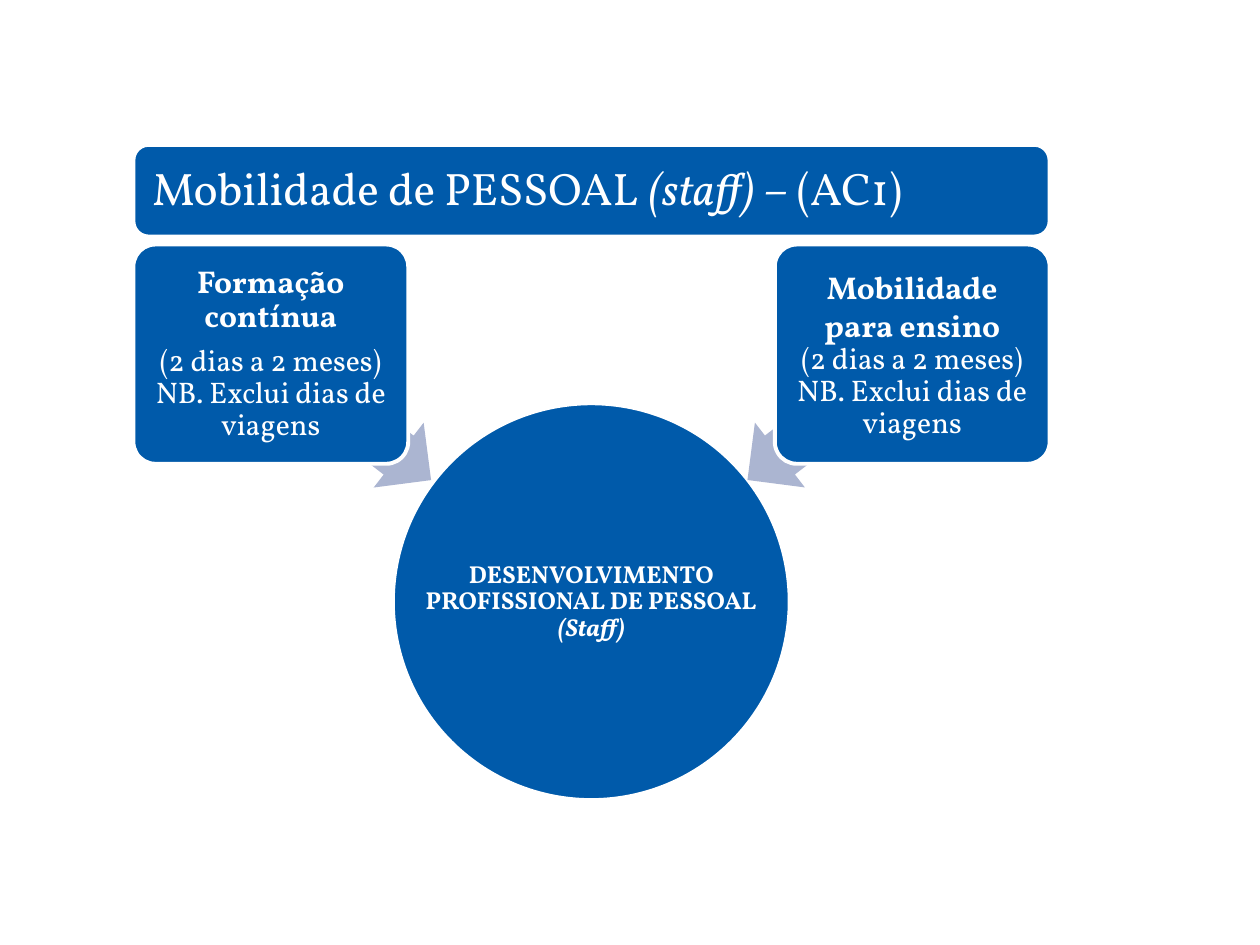
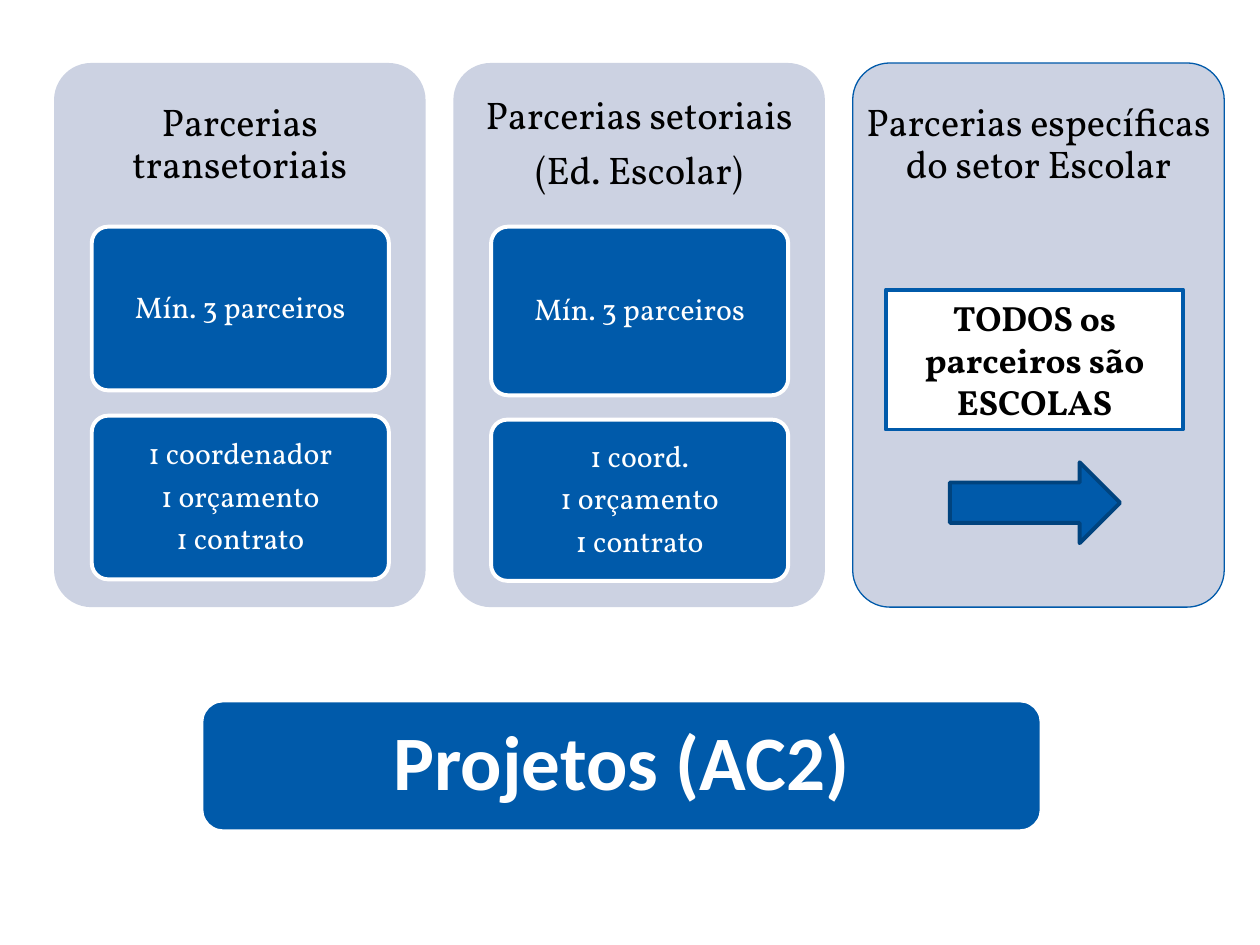
"""Build two slides on staff mobility (AC1) and projects (AC2)."""
from dataclasses import dataclass

from lxml import etree
from pptx import Presentation
from pptx.dml.color import RGBColor
from pptx.enum.shapes import MSO_SHAPE
from pptx.enum.text import MSO_ANCHOR, MSO_AUTO_SIZE, PP_ALIGN
from pptx.oxml.ns import qn
from pptx.util import Cm, Pt

ROUND, OVAL, RECT = MSO_SHAPE.ROUNDED_RECTANGLE, MSO_SHAPE.OVAL, MSO_SHAPE.RECTANGLE
LEFT_ARROW, RIGHT_ARROW = MSO_SHAPE.LEFT_ARROW, MSO_SHAPE.RIGHT_ARROW
LEFT, CENTER = PP_ALIGN.LEFT, PP_ALIGN.CENTER
MIDDLE, NO_FIT = MSO_ANCHOR.MIDDLE, MSO_AUTO_SIZE.NONE
TITLE_ONLY, TWO_CONTENT = 5, 3

COLORS = {
    "blue": "005AAA",
    "navy": "00437E",
    "arrow": "ABB5D1",
    "panel": "CCD2E2",
    "white": "FFFFFF",
    "black": "000000",
}


@dataclass(frozen=True)
class Box:
    """A frame in centimetres."""
    x: float
    y: float
    w: float
    h: float

    def inner(self, gap: float) -> "Box":
        """Return the frame shrunk by a gap on every side."""
        return Box(self.x + gap, self.y + gap, self.w - 2 * gap, self.h - 2 * gap)


@dataclass(frozen=True)
class Run:
    """A stretch of text in one style."""
    text: str
    bold: bool = False
    italic: bool = False


@dataclass(frozen=True)
class Para:
    """A paragraph; a tight one has close lines and space after it."""
    runs: tuple[Run, ...]
    size: float
    tight: bool = True


@dataclass(frozen=True)
class Column:
    """A partnership column with its heading and its two cards."""
    heading: tuple[str, ...]
    partners: tuple[float, float] | None = None
    terms: tuple[float, float] | None = None
    items: tuple[str, ...] = ()
    line: str | None = None


def plain(size: float, *texts: str) -> list[Para]:
    """Return one unstyled paragraph for each text."""
    return [Para((Run(t),), size) for t in texts]


def rgb(name: str) -> RGBColor:
    """Look up a colour of the palette."""
    return RGBColor.from_string(COLORS[name])


def place(sp, box: Box) -> None:
    """Move a shape to a frame."""
    for name, value in {"left": box.x, "top": box.y, "width": box.w, "height": box.h}.items():
        setattr(sp, name, Cm(value))


def draw(s, kind, box: Box, fill: str = "blue", line: str | None = "white",
         width: float = 2.25, adj: tuple[float, ...] = (), rotation: float = 0):
    """Draw a filled preset shape."""
    sp = s.shapes.add_shape(kind, Cm(box.x), Cm(box.y), Cm(box.w), Cm(box.h))
    sp.shadow.inherit = False
    sp.rotation = rotation
    for i, value in enumerate(adj):
        sp.adjustments[i] = value
    sp.fill.solid()
    sp.fill.fore_color.rgb = rgb(fill)
    if line:
        sp.line.color.rgb = rgb(line)
        sp.line.width = Pt(width)
    else:
        sp.line.fill.background()
    return sp


def write(sp, paras: list[Para], color: str = "white", inset: float = 0.1,
          align=CENTER, font: str = "Vollkorn") -> None:
    """Fill the text frame of a shape or placeholder."""
    tf = sp.text_frame
    frame = {"word_wrap": True, "auto_size": NO_FIT, "vertical_anchor": MIDDLE}
    frame |= {f"margin_{side}": Cm(inset) for side in ("left", "right", "top", "bottom")}
    for name, value in frame.items():
        setattr(tf, name, value)
    for i, para in enumerate(paras):
        p = tf.paragraphs[0] if i == 0 else tf.add_paragraph()
        pPr = p._p.get_or_add_pPr()
        pPr.set("marL", "0")
        pPr.set("indent", "0")
        etree.SubElement(pPr, qn("a:buNone"))
        spacing = {
            "alignment": align,
            "line_spacing": 0.9 if para.tight else 1.0,
            "space_before": Pt(0),
            "space_after": Pt(0.35 * para.size if para.tight else 0),
        }
        for name, value in spacing.items():
            setattr(p, name, value)
        for run in para.runs:
            r = p.add_run()
            r.text = run.text
            style = {"name": font, "size": Pt(para.size), "bold": run.bold, "italic": run.italic}
            for name, value in style.items():
                setattr(r.font, name, value)
            r.font.color.rgb = rgb(color)


def label(s, box: Box, paras: list[Para], **options) -> None:
    """Write text in a box of its own."""
    sp = s.shapes.add_textbox(Cm(box.x), Cm(box.y), Cm(box.w), Cm(box.h))
    write(sp, paras, **options)


def banner(s, box: Box, gap: float, para: Para, **options) -> None:
    """Draw a band with the slide title on top of it."""
    sp = draw(s, ROUND, box)
    title = s.shapes.title
    sp._element.addnext(title._element)
    place(title, box.inner(gap))
    write(title, [para], **options)


def mobility_slide(prs) -> None:
    """Build the slide on staff mobility."""
    s = prs.slides.add_slide(prs.slide_layouts[TITLE_ONLY])
    circle = Box(7.92, 8.13, 8, 8)
    draw(s, OVAL, circle)
    label(s, circle, [Para((Run("DESENVOLVIMENTO PROFISSIONAL DE PESSOAL ", bold=True),
                            Run("(Staff)", bold=True, italic=True)), 14)], inset=0.03)

    duration = plain(17, "(2 dias a 2 meses) NB. Exclui dias de viagens")
    training = [Para((Run("Formação contínua", bold=True),), 18)]
    teaching = [Para((Run(t, bold=True),), 18, tight=False)
                for t in ("Mobilidade", "para ensino")]
    for card_x, arrow_x, angle, heading in ((2.69, 5.16, 217.6, training),
                                            (15.62, 14.66, 322.4, teaching)):
        draw(s, LEFT_ARROW, Box(arrow_x, 7.65, 3.94, 1.65), "arrow", None,
             adj=(0.6, 0.5), rotation=angle)
        card = Box(card_x, 4.93, 5.54, 4.42)
        draw(s, ROUND, card, adj=(0.1,))
        label(s, card, heading + duration)

    title = Para((Run("Mobilidade de PESSOAL "), Run("(staff)", italic=True),
                  Run(" – (AC1)")), 26)
    banner(s, Box(2.69, 2.92, 18.47, 1.85), 0.1, title, inset=0.28, align=LEFT)


def projects_slide(prs) -> None:
    """Build the slide on project partnerships."""
    s = prs.slides.add_slide(prs.slide_layouts[TWO_CONTENT])
    banner(s, Box(4.06, 14.12, 16.94, 2.64), 0.13,
           Para((Run("Projetos (AC2)", bold=True),), 44), inset=0.25, font="Calibri")

    columns = (
        Column(("Parcerias transetoriais",), (4.57, 3.3), (8.38, 3.3),
               ("1 coordenador", "1 orçamento", "1 contrato")),
        Column(("Parcerias setoriais", "(Ed. Escolar)"), (4.57, 3.4), (8.46, 3.25),
               ("1 coord.", "1 orçamento", "1 contrato")),
        Column(("Parcerias específicas do setor Escolar",), line="blue"),
    )
    for i, column in enumerate(columns):
        x = 1.09 + 8.05 * i
        draw(s, ROUND, Box(x, 1.27, 7.49, 10.97), "panel", column.line, 0.75, (0.1,))
        label(s, Box(x, 1.27, 7.49, 3.3), plain(22, *column.heading),
              color="black", inset=0.23)
        if column.partners and column.terms:
            partners, terms = (Box(x + 0.76, y, 5.99, h)
                               for y, h in (column.partners, column.terms))
            draw(s, ROUND, partners, adj=(0.1,))
            label(s, partners, plain(17, "Mín. 3 parceiros"))
            card = draw(s, ROUND, terms, adj=(0.1,))
            body = s.placeholders[i + 1]
            card._element.addnext(body._element)
            place(body, terms)
            write(body, plain(17, *column.items))

    draw(s, RIGHT_ARROW, Box(19.15, 9.32, 3.43, 1.63), line="navy")
    note = draw(s, RECT, Box(17.86, 5.84, 5.99, 2.82), "white", "blue")
    write(note, [Para((Run("TODOS os parceiros são ESCOLAS", bold=True),), 20, tight=False)],
          color="black", inset=0.25)


def main() -> None:
    """Build and save the presentation."""
    prs = Presentation()
    prs.slide_width, prs.slide_height = Cm(25.4), Cm(19.05)
    mobility_slide(prs)
    projects_slide(prs)
    prs.save("out.pptx")


if __name__ == "__main__":
    main()
